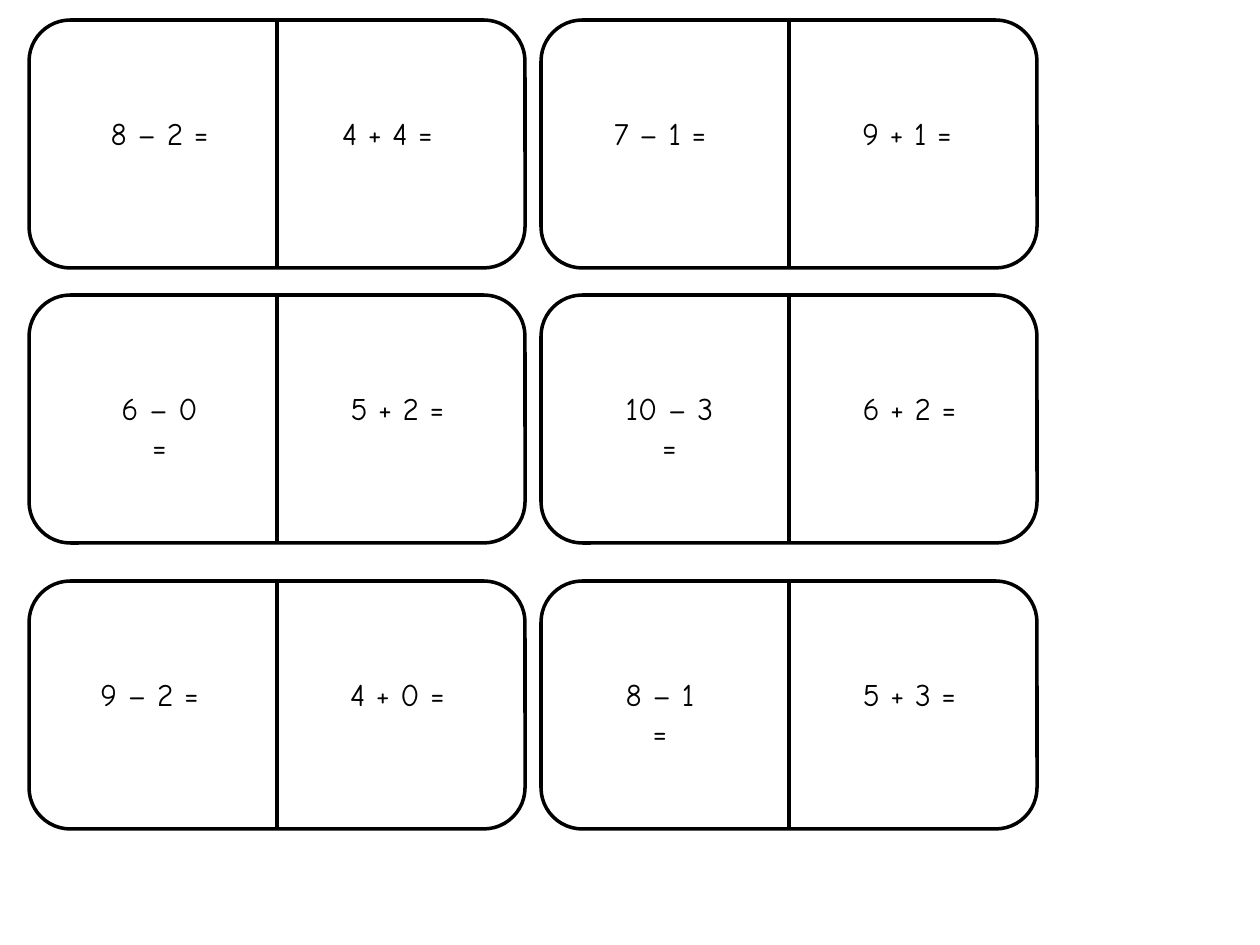
from dataclasses import dataclass

from pptx import Presentation
from pptx.dml.color import RGBColor
from pptx.enum.shapes import MSO_CONNECTOR as CONN, MSO_SHAPE as SHAPE
from pptx.enum.text import MSO_AUTO_SIZE as AUTO, PP_ALIGN as ALIGN
from pptx.oxml.ns import qn
from pptx.util import Pt
from lxml.etree import SubElement

PX = 914400 / 126


@dataclass(frozen=True)
class Theme:
    ink: RGBColor = RGBColor(0, 0, 0)
    font: str = "Comic Neue"
    size: int = 18
    stroke: int = 2


class Board:
    """Draws domino cards and sums on one slide, with lengths in px."""

    def __init__(self, s, theme):
        self.s, self.theme = s, theme

    def emu(self, *lengths):
        return [round(n * PX) for n in lengths]

    def outline(self, sp):
        sp.line.color.rgb = self.theme.ink
        sp.line.width = Pt(self.theme.stroke)

    def card(self, x, y, w, h):
        grp = self.s.shapes.add_group_shape()
        sp = grp.shapes.add_shape(SHAPE.ROUNDED_RECTANGLE, *self.emu(x, y, w, h))
        sp.shadow.inherit = False
        sp.fill.background()
        self.outline(sp)
        mid = x + w // 2
        divider = grp.shapes.add_connector(CONN.STRAIGHT, *self.emu(mid, y, mid, y + h))
        divider.begin_connect(sp, 0)
        divider.end_connect(sp, 2)
        self.outline(divider)
        SubElement(divider._element.spPr, qn("a:effectLst"))

    def sum(self, text, x, y, w, h, wrap=False):
        tf = self.s.shapes.add_textbox(*self.emu(x, y, w, h)).text_frame
        tf.word_wrap = wrap
        tf.auto_size = AUTO.SHAPE_TO_FIT_TEXT
        tf.text = text
        p = tf.paragraphs[0]
        p.alignment = ALIGN.CENTER
        font = p.runs[0].font
        font.name, font.size = self.theme.font, Pt(self.theme.size)
        font.color.rgb = self.theme.ink


CARD_W, CARD_H = 496, 248
COLUMNS = (29, 541)
ROWS = (20, 295, 581)
SUM_DROP, SUM_H = 88, 50
WRAPPED = {"6 – 0 =", "8 – 1 ="}
SUMS = [
    [[("8 – 2 =", 69, 123), ("4 + 4 =", 296, 125)],
     [("7 – 1 =", 60, 118), ("9 + 1 =", 306, 120)]],
    [[("6 – 0 =", 71, 119), ("5 + 2 =", 306, 125)],
     [("10 – 3 =", 60, 137), ("6 + 2 =", 306, 125)]],
    [[("9 – 2 =", 59, 123), ("4 + 0 =", 306, 125)],
     [("8 – 1 =", 62, 114), ("5 + 3 =", 306, 125)]],
]


def main():
    prs = Presentation()
    board = Board(prs.slides.add_slide(prs.slide_layouts[6]), Theme())
    prs.slide_width, prs.slide_height = board.emu(1260, 945)
    for y, row in zip(ROWS, SUMS):
        for x, halves in zip(COLUMNS, row):
            board.card(x, y, CARD_W, CARD_H)
            for text, dx, w in halves:
                board.sum(text, x + dx, y + SUM_DROP, w, SUM_H, text in WRAPPED)
    prs.save("out.pptx")


if __name__ == "__main__":
    main()
